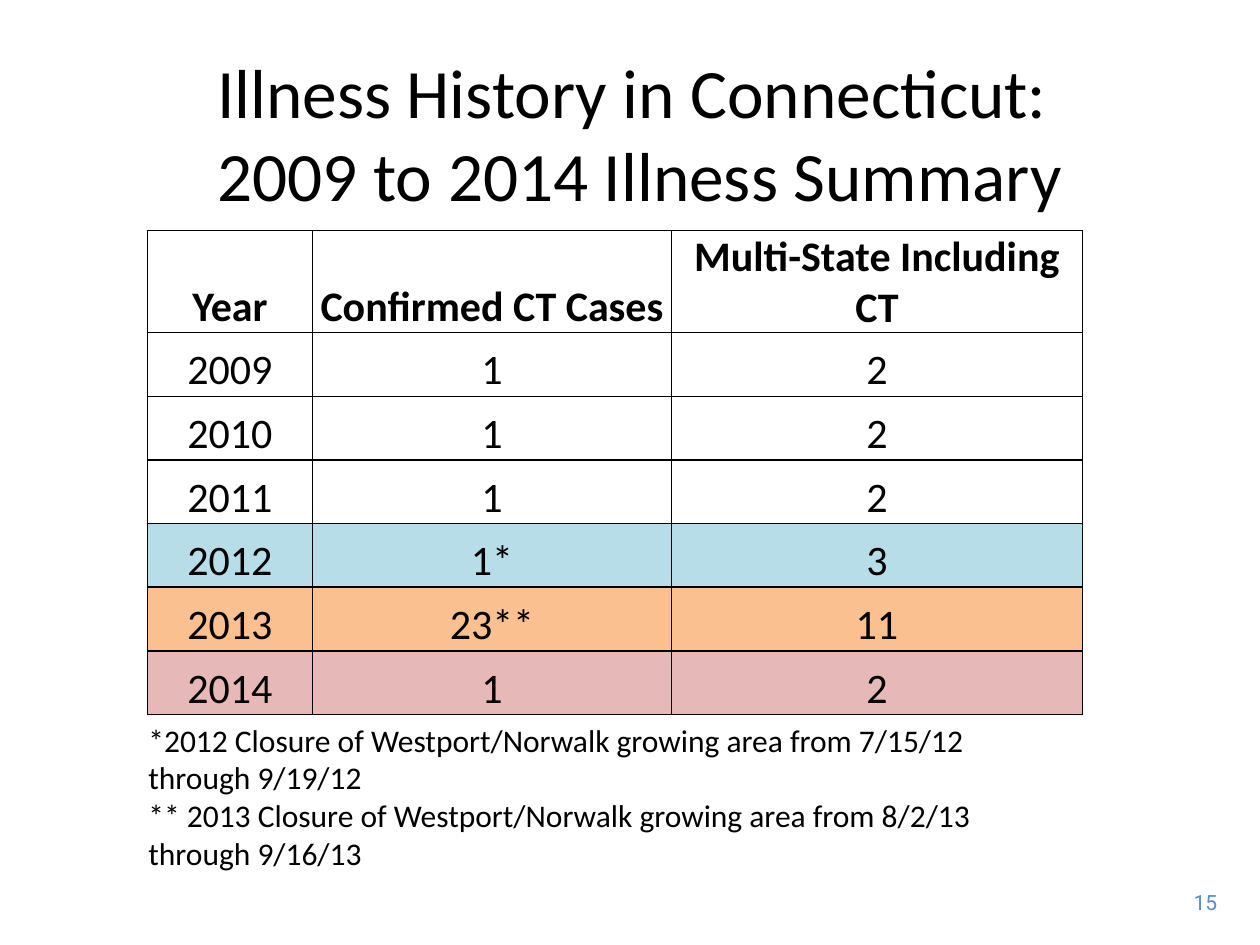
from dataclasses import dataclass
from typing import Optional

from lxml import etree
from pptx import Presentation
from pptx.dml.color import RGBColor
from pptx.enum.text import MSO_ANCHOR, MSO_AUTO_SIZE, PP_ALIGN
from pptx.oxml.ns import qn
from pptx.util import Inches, Pt

LEFT, CENTER, RIGHT = PP_ALIGN.LEFT, PP_ALIGN.CENTER, PP_ALIGN.RIGHT
TOP, MIDDLE, BOTTOM = MSO_ANCHOR.TOP, MSO_ANCHOR.MIDDLE, MSO_ANCHOR.BOTTOM
FIT_SHAPE = MSO_AUTO_SIZE.SHAPE_TO_FIT_TEXT
SLIDE_W, SLIDE_H = Inches(10), Inches(7.5)


@dataclass(frozen=True)
class Theme:
    font: str = "Calibri"
    number_font: str = "Roboto"
    ink: str = "000000"
    number: str = "558ED5"
    blue: str = "B7DEE8"
    orange: str = "FAC090"
    pink: str = "E6B9B8"
    title_size: float = 39.6
    table_size: float = 24
    note_size: float = 18
    number_size: float = 12
    border: float = 1


@dataclass(frozen=True)
class Box:
    x: float
    y: float
    w: float
    h: float

    def emu(self) -> tuple[int, int, int, int]:
        return (int(self.x * SLIDE_W), int(self.y * SLIDE_H),
                int(self.w * SLIDE_W), int(self.h * SLIDE_H))


@dataclass(frozen=True)
class Row:
    values: tuple[str, str, str]
    fill: Optional[str] = None
    bold: bool = False


THEME = Theme()
TITLE_BOX = Box(0.058, 0.056, 0.9, 0.167)
TABLE_BOX = Box(0.117, 0.244, 0.742, 0.476)
NOTES_BOX = Box(0.108, 0.756, 0.747, 0.175)
NUMBER_BOX = Box(0.935, 0.935, 0.041, 0.04)
COLUMN_SHARES = (0.131, 0.285, 0.326)
ROW_SHARE = 0.0674

TITLE = "Illness History in Connecticut: \v2009 to 2014 Illness Summary"
ROWS = (
    Row(("Year", "Confirmed CT Cases", "Multi-State Including CT"), bold=True),
    Row(("2009", "1", "2")),
    Row(("2010", "1", "2")),
    Row(("2011", "1", "2")),
    Row(("2012", "1*", "3"), THEME.blue),
    Row(("2013", "23**", "11"), THEME.orange),
    Row(("2014", "1", "2"), THEME.pink),
)
NOTES = (
    "*2012 Closure of Westport/Norwalk growing area from 7/15/12 through 9/19/12",
    "** 2013 Closure of Westport/Norwalk growing area from 8/2/13 through 9/16/13",
)


def write(tf, *lines: str, size: float, font: str = THEME.font,
          color: str = THEME.ink, bold: bool = False, align=LEFT) -> None:
    for i, line in enumerate(lines):
        p = tf.add_paragraph() if i else tf.paragraphs[0]
        p.text = line
        p.alignment = align
        for r in p.runs:
            r.font.name = font
            r.font.size = Pt(size)
            r.font.bold = bold
            r.font.color.rgb = RGBColor.from_string(color)


def add_text(s, box: Box, *lines: str, anchor=TOP, wrap: bool = True,
             grow: bool = False, **style) -> None:
    tf = s.shapes.add_textbox(*box.emu()).text_frame
    tf.word_wrap = wrap
    tf.vertical_anchor = anchor
    if grow:
        tf.auto_size = FIT_SHAPE
    write(tf, *lines, **style)


def set_borders(cell) -> None:
    tcPr = cell._tc.get_or_add_tcPr()
    for i, side in enumerate(("a:lnL", "a:lnR", "a:lnT", "a:lnB")):
        ln = etree.Element(qn(side), w=str(Pt(THEME.border)))
        fill = etree.SubElement(ln, qn("a:solidFill"))
        etree.SubElement(fill, qn("a:srgbClr"), val=THEME.ink)
        tcPr.insert(i, ln)


def format_cell(cell, text: str, row: Row) -> None:
    cell.margin_left = cell.margin_right = cell.margin_top = Inches(0.01)
    cell.margin_bottom = 0
    cell.vertical_anchor = BOTTOM
    if row.fill:
        cell.fill.solid()
        cell.fill.fore_color.rgb = RGBColor.from_string(row.fill)
    else:
        cell.fill.background()
    set_borders(cell)
    write(cell.text_frame, text, size=THEME.table_size, bold=row.bold, align=CENTER)


def add_illness_table(s, box: Box, rows: tuple[Row, ...]) -> None:
    table = s.shapes.add_table(len(rows), len(COLUMN_SHARES), *box.emu()).table
    table.first_row = table.horz_banding = False
    for column, share in zip(table.columns, COLUMN_SHARES):
        column.width = int(share * SLIDE_W)
    for i, row in enumerate(rows):
        table.rows[i].height = int(ROW_SHARE * SLIDE_H)
        for j, text in enumerate(row.values):
            format_cell(table.cell(i, j), text, row)


def main() -> None:
    prs = Presentation()
    prs.slide_width, prs.slide_height = SLIDE_W, SLIDE_H
    s = prs.slides.add_slide(prs.slide_layouts[6])
    add_text(s, NUMBER_BOX, "15", wrap=False, grow=True, size=THEME.number_size,
             font=THEME.number_font, color=THEME.number, align=RIGHT)
    add_text(s, TITLE_BOX, TITLE, anchor=MIDDLE, size=THEME.title_size, align=CENTER)
    add_illness_table(s, TABLE_BOX, ROWS)
    add_text(s, NOTES_BOX, *NOTES, grow=True, size=THEME.note_size)
    prs.save("out.pptx")


if __name__ == "__main__":
    main()
